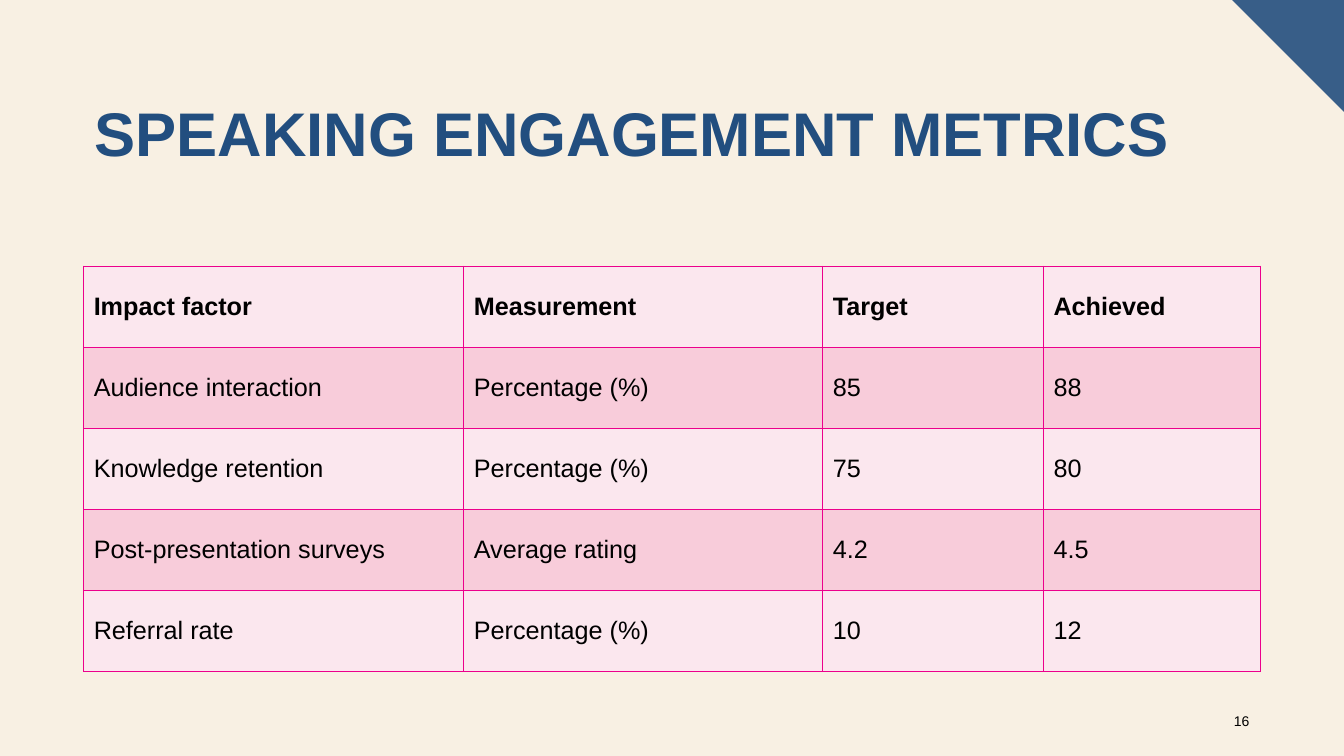
import lxml.etree
import pptx
import pptx.dml.color
import pptx.enum.text
import pptx.oxml.ns
import pptx.util

Inches = pptx.util.Inches
Pt = pptx.util.Pt

BLACK = "000000"
BORDER = "EC008C"
ROW_FILLS = ["FBE7EE", "F8CCDA"]


def color(value):
    return pptx.dml.color.RGBColor.from_string(value)


def style_text(paragraph, size, text_color, bold=False):
    paragraph.font.name = "Arial"
    paragraph.font.size = Pt(size)
    paragraph.font.bold = bold
    paragraph.font.color.rgb = color(text_color)


presentation = pptx.Presentation()
presentation.slide_width = Inches(13.33)
presentation.slide_height = Inches(7.5)
slide = presentation.slides.add_slide(presentation.slide_layouts[6])
slide.background.fill.solid()
slide.background.fill.fore_color.rgb = color("F8F0E3")

# Corner triangle
builder = slide.shapes.build_freeform(Inches(12.22), 0)
builder.add_line_segments([(Inches(13.33), 0), (Inches(13.33), Inches(1.11))], close=True)
corner = builder.convert_to_shape()
corner.shadow.inherit = False
corner.fill.solid()
corner.fill.fore_color.rgb = color("385E88")
corner.line.fill.background()

# Title
title = slide.shapes.add_textbox(Inches(0.84), Inches(0.98), Inches(11.66), Inches(1.45))
title.text_frame.word_wrap = True
paragraph = title.text_frame.paragraphs[0]
paragraph.text = "SPEAKING ENGAGEMENT METRICS"
paragraph.line_spacing = 0.9
style_text(paragraph, 44, "224E7F", bold=True)

# Metrics table
metrics = [
    ["Impact factor", "Measurement", "Target", "Achieved"],
    ["Audience interaction", "Percentage (%)", "85", "88"],
    ["Knowledge retention", "Percentage (%)", "75", "80"],
    ["Post-presentation surveys", "Average rating", "4.2", "4.5"],
    ["Referral rate", "Percentage (%)", "10", "12"],
]
column_widths = [3.77, 3.56, 2.19, 2.15]
table = slide.shapes.add_table(
    len(metrics), len(column_widths), Inches(0.83), Inches(2.64), Inches(11.67), Inches(4.02)
).table
table.horz_banding = False
table.first_row = False
for column, width in zip(table.columns, column_widths):
    column.width = Inches(width)

for row_index, values in enumerate(metrics):
    for column_index, value in enumerate(values):
        cell = table.cell(row_index, column_index)
        cell.vertical_anchor = pptx.enum.text.MSO_ANCHOR.MIDDLE
        cell_properties = cell._tc.get_or_add_tcPr()
        for side in ["lnL", "lnR", "lnT", "lnB"]:
            line = lxml.etree.SubElement(
                cell_properties, pptx.oxml.ns.qn(f"a:{side}"), w=str(Pt(1))
            )
            line_fill = lxml.etree.SubElement(line, pptx.oxml.ns.qn("a:solidFill"))
            lxml.etree.SubElement(line_fill, pptx.oxml.ns.qn("a:srgbClr"), val=BORDER)
        cell.fill.solid()
        cell.fill.fore_color.rgb = color(ROW_FILLS[row_index % 2])
        paragraph = cell.text_frame.paragraphs[0]
        paragraph.text = value
        style_text(paragraph, 18, BLACK, bold=row_index == 0)

# Slide number
number = slide.shapes.add_textbox(Inches(11.99), Inches(6.95), Inches(0.5), Inches(0.4))
number.text_frame.word_wrap = True
number.text_frame.vertical_anchor = pptx.enum.text.MSO_ANCHOR.MIDDLE
paragraph = number.text_frame.paragraphs[0]
paragraph.text = "16"
paragraph.alignment = pptx.enum.text.PP_ALIGN.RIGHT
style_text(paragraph, 10, BLACK)

presentation.save("out.pptx")
